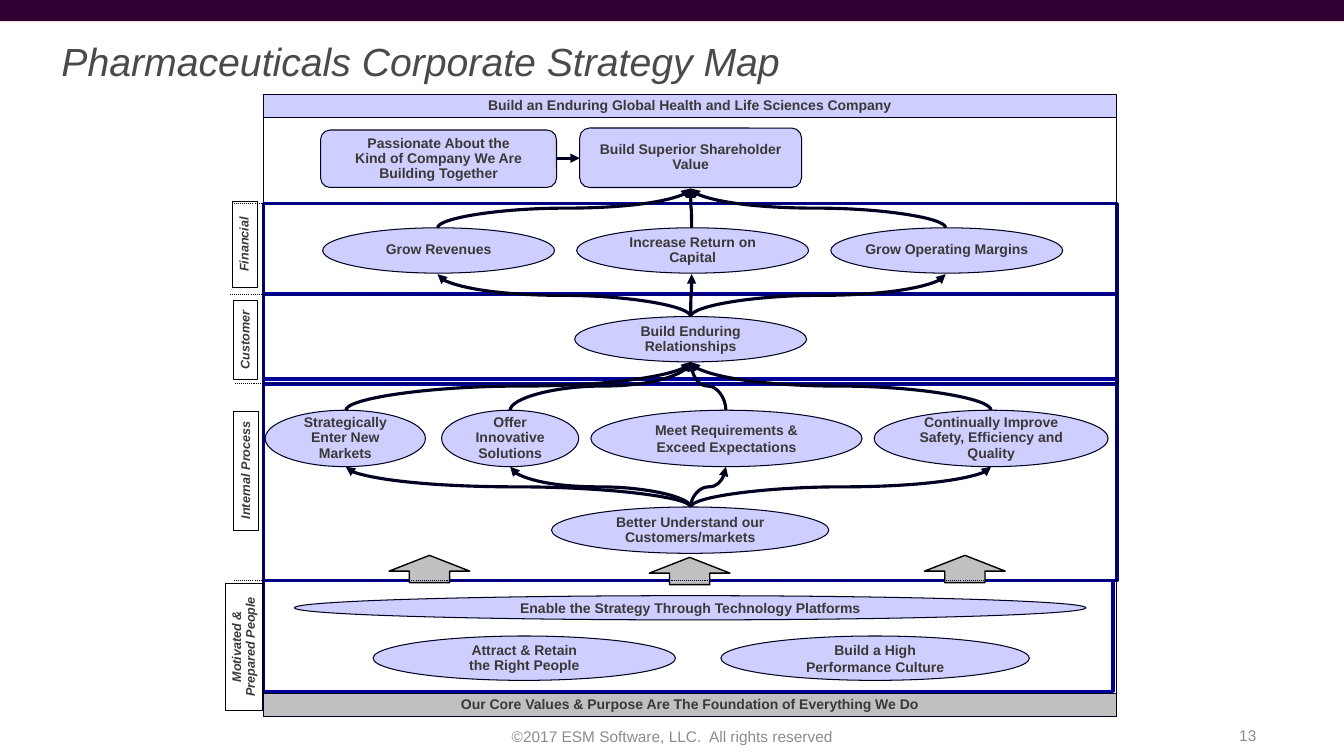
"""Build the pharmaceuticals corporate strategy map slide."""
from lxml import etree
from pptx import Presentation, util as u
from pptx.dml.color import RGBColor
from pptx.enum import dml, shapes, text as t
from pptx.oxml.ns import qn

PLUM = RGBColor(0x31, 0x00, 0x32)
NAVY = RGBColor(0x00, 0x00, 0x99)
DARK = RGBColor(0x00, 0x00, 0x20)
BLACK = RGBColor(0x00, 0x00, 0x00)
LILAC = RGBColor(0xCF, 0xCF, 0xFF)
SILVER = RGBColor(0xC0, 0xC0, 0xC0)
INK = RGBColor(0x3B, 0x38, 0x38)
HEAD = RGBColor(0x4A, 0x4A, 0x4A)
NOTE = RGBColor(0x8C, 0x8C, 0x8C)

COLS, ROWS = 1333, 750
CELL = u.Inches(0.01)
LEFT, RIGHT, MID = 261, 1107, 685
OVAL, RECT = shapes.MSO_SHAPE.OVAL, shapes.MSO_SHAPE.RECTANGLE
ROUND, ARROW = shapes.MSO_SHAPE.ROUNDED_RECTANGLE, shapes.MSO_SHAPE.UP_ARROW
CENTER, START, END = t.PP_ALIGN.CENTER, t.PP_ALIGN.LEFT, t.PP_ALIGN.RIGHT

deck = Presentation()
deck.slide_width, deck.slide_height = COLS * CELL, ROWS * CELL
page = deck.slides.add_slide(deck.slide_layouts[5])


def put(text, form, size=10, color=INK, bold=True, slant=False,
        align=CENTER, gap=0.9, side=0):
    """Write text into a shape."""
    frame = form.text_frame
    frame.text = text
    frame.word_wrap = True
    frame.auto_size = t.MSO_AUTO_SIZE.NONE
    frame.vertical_anchor = t.MSO_ANCHOR.MIDDLE
    frame.margin_left = frame.margin_right = side * CELL
    frame.margin_top = frame.margin_bottom = 0
    for para in frame.paragraphs:
        para.alignment, para.line_spacing = align, gap
        font = para.font
        font.name, font.size, font.color.rgb = "Arial", u.Pt(size), color
        font.bold, font.italic = bold, slant


def link(x1, y1, x2, y2, width=0.75, curve=False, tip=False, dash=None):
    """Draw a line; a curve leaves and arrives vertically, going up."""
    kind = shapes.MSO_CONNECTOR.STRAIGHT
    back = x2 < x1
    if curve:
        kind = shapes.MSO_CONNECTOR.CURVE
        cx, cy = (x1 + x2) / 2, (y1 + y2) / 2
        dx, dy = abs(x2 - x1) / 2, (y1 - y2) / 2
        x1, x2 = (cx + dy, cx - dy) if back else (cx - dy, cx + dy)
        y1, y2 = cy - dx, cy + dx
    wire = page.shapes.add_connector(kind, *(int(n * CELL) for n in (x1, y1, x2, y2)))
    wire.line.color.rgb, wire.line.width = DARK, u.Pt(width)
    if dash:
        wire.line.dash_style = dash
    props = wire._element.spPr
    if curve:
        props.find(qn("a:xfrm")).set("rot", str((90 if back else 270) * 60000))
    if tip:
        etree.SubElement(props.find(qn("a:ln")), qn("a:tailEnd"), type="triangle")
    etree.SubElement(props, qn("a:effectLst"))


title = page.shapes.title
title.left, title.top, title.width, title.height = (n * CELL for n in (51, 38, 925, 50))
put("Pharmaceuticals Corporate Strategy Map", title, size=28, color=HEAD,
    bold=False, slant=True, align=START, side=10)

bands = [(576, 843, 110), (376, 847, 200), (291, 847, 90), (202, 847, 90)]
forms = [("", RECT, (0, 0, COLS, 21), PLUM, None, 0, {})]
forms += [("", RECT, (LEFT, top, wide, high), None, NAVY, 2.25, {})
          for top, wide, high in bands]

goals = [
    ("Grow Revenues", OVAL, (320, 226, 230, 45), {}),
    ("Increase Return on Capital", OVAL, (572, 226, 230, 45), {}),
    ("Grow Operating Margins", OVAL, (824, 226, 230, 45), {}),
    ("Build Enduring Relationships", OVAL, (570, 314, 230, 45), {}),
    ("Strategically Enter New Markets", OVAL, (263, 407, 159, 56), {}),
    ("Offer Innovative Solutions", OVAL, (438, 407, 136, 56), {}),
    ("Meet Requirements & Exceed Expectations", OVAL, (586, 407, 269, 56), {"gap": 1.0}),
    ("Continually Improve Safety, Efficiency and Quality", OVAL, (867, 407, 232, 56), {}),
    ("Better Understand our Customers/markets", OVAL, (547, 503, 275, 46), {}),
    ("Enable the Strategy Through Technology Platforms", OVAL, (292, 591, 785, 24), {"gap": 1.0}),
    ("Attract & Retain\nthe Right People", OVAL, (370, 631, 300, 44), {}),
    ("Build a High\nPerformance Culture", OVAL, (715, 631, 306, 44), {"gap": 1.0}),
    ("Passionate About the\nKind of Company We Are\nBuilding Together", ROUND, (318, 129, 234, 57), {}),
    ("Build Superior Shareholder Value", ROUND, (575, 127, 220, 59), {"side": 10}),
    ("Build an Enduring Global Health and Life Sciences Company", RECT, (LEFT, 94, 846, 23), {}),
]
forms += [(words, kind, box, LILAC, DARK, 0.75, style) for words, kind, box, style in goals]
forms += [("Our Core Values & Purpose Are The Foundation of Everything We Do",
           RECT, (LEFT, 688, 846, 23), SILVER, DARK, 0.75, {})]
forms += [("", ARROW, (x, y, 80, 27), SILVER, BLACK, 1, {})
          for x, y in ((386, 551), (644, 553), (917, 551))]

tags = [("Motivated & Prepared People", (179, 623, 126, 37)), ("Customer", (204, 325, 79, 24)),
        ("Internal Process", (185, 454, 118, 25)), ("Financial", (200, 230, 85, 25))]
forms += [(words, RECT, box, None, BLACK, 0.25, {"size": 9, "slant": True, "side": 10})
          for words, box in tags]

for words, kind, box, fill, edge, width, style in forms:
    form = page.shapes.add_shape(kind, *(n * CELL for n in box))
    form.shadow.inherit = False
    if fill is None:
        form.fill.background()
    else:
        form.fill.solid()
        form.fill.fore_color.rgb = fill
    if edge is None:
        form.line.fill.background()
    else:
        form.line.color.rgb, form.line.width = edge, u.Pt(width)
    if kind == ARROW:
        form.adjustments[1] = 0.58
    if "slant" in style:
        form.rotation = 270
    if words:
        put(words, form, **style)

link(LEFT, 94, LEFT, 696)
link(RIGHT, 101, RIGHT, 711)
for x, y in ((233, 380), (232, 202), (232, 576), (228, 292)):
    link(x, y, x + 877, y, dash=dml.MSO_LINE.ROUND_DOT)

link(552, 157, 575, 157, width=2.25, tip=True)
fans = [((434, 686, 938), 226, 187, True), ((434, 686, 938), 314, 272, False),
        ((343, 506, 720, 983), 407, 359, True), ((343, 506, 720, 983), 503, 463, False)]
for spots, low, high, merge in fans:
    for x in spots:
        first, last = (x, MID) if merge else (MID, x)
        link(first, low, last, high, width=2.25, curve=True, tip=True)

feet = [("13", (956, 710, 300, 40), END),
        ("©2017 ESM Software, LLC.  All rights reserved", (442, 711, 450, 40), CENTER)]
for words, box, align in feet:
    foot = page.shapes.add_textbox(*(n * CELL for n in box))
    put(words, foot, size=11, color=NOTE, bold=False, align=align, gap=1.0, side=10)

deck.save("out.pptx")
